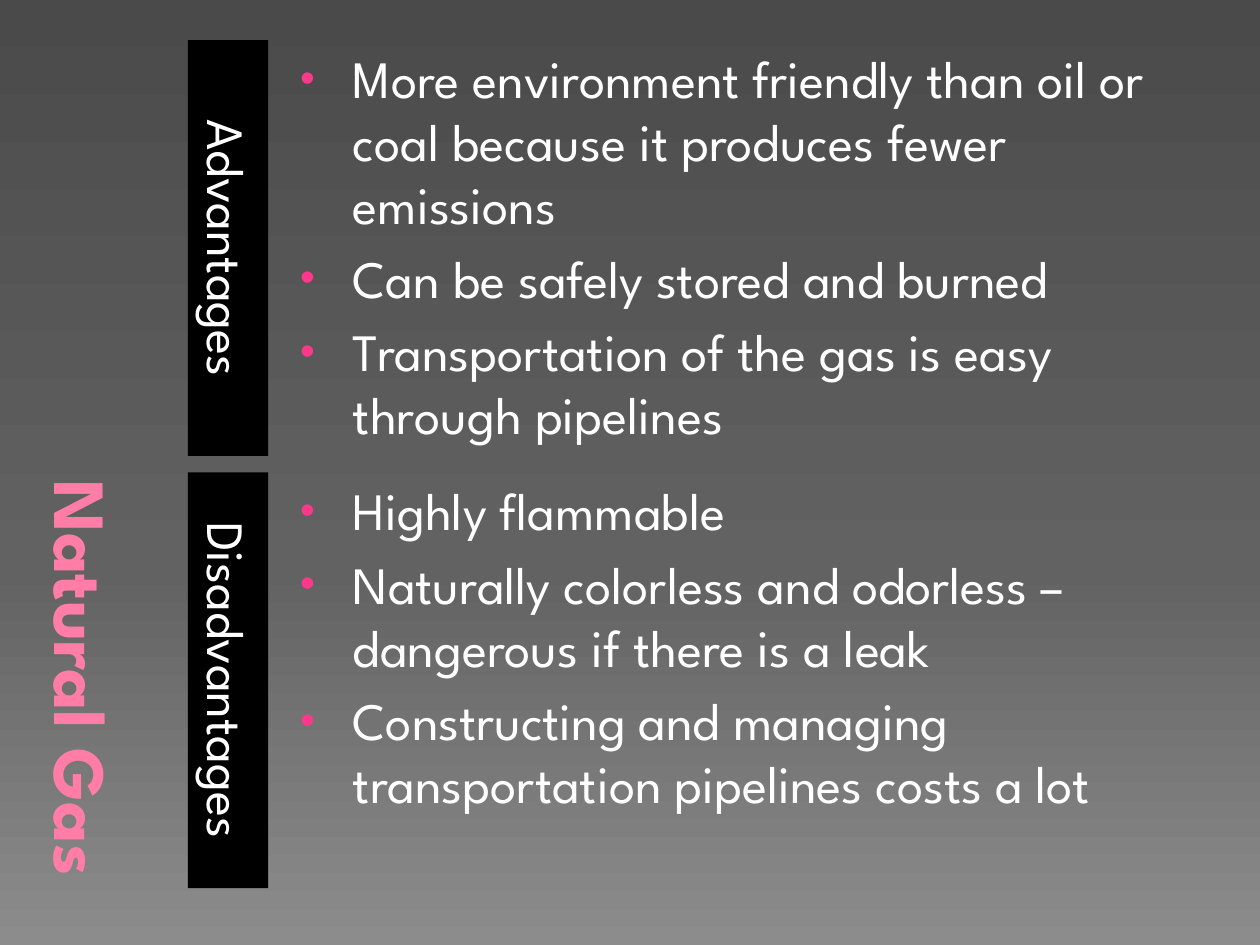
from copy import deepcopy

from pptx import Presentation
from pptx.dml.color import RGBColor
from pptx.enum.shapes import MSO_SHAPE
from pptx.enum.text import MSO_ANCHOR, PP_ALIGN
from pptx.oxml import parse_xml
from pptx.oxml.ns import nsdecls, qn
from pptx.util import Pt

FONT = "League Spartan"
TOP, SECTION_H, GAP = 23, 237.6, 9.3
SECTIONS = [
    ("Advantages", [
        "More environment friendly than oil or coal because it produces fewer emissions",
        "Can be safely stored and burned",
        "Transportation of the gas is easy through pipelines",
    ]),
    ("Disadvantages", [
        "Highly flammable",
        "Naturally colorless and odorless – dangerous if there is a leak",
        "Constructing and managing transportation pipelines costs a lot",
    ]),
]


def rgb(color):
    return RGBColor.from_string(color)


def set_background(s, stops):
    fill = s.background.fill
    fill.gradient()
    fill.gradient_angle = 270
    gs_list = s.element.find(".//" + qn("a:gsLst"))
    while len(gs_list) < len(stops):
        gs_list.append(deepcopy(gs_list[0]))
    for stop, (position, color) in zip(fill.gradient_stops, stops):
        stop.position = position
        stop.color.rgb = rgb(color)


def style(p, size, color, bold=False):
    p.font.name = FONT
    p.font.size = Pt(size)
    p.font.bold = bold
    p.font.color.rgb = rgb(color)


def set_vertical(tf):
    """Turn the text to read from top to bottom."""
    tf.word_wrap = True
    tf._txBody.bodyPr.set("vert", "vert")


def add_title(s, text, x, y, w, h):
    tf = s.shapes.add_textbox(Pt(x), Pt(y), Pt(w), Pt(h)).text_frame
    set_vertical(tf)
    tf.vertical_anchor = MSO_ANCHOR.BOTTOM
    p = tf.paragraphs[0]
    p.alignment = PP_ALIGN.RIGHT
    r = p.add_run()
    r.text = text
    style(p, 42, "FF7DA7", bold=True)
    r.font.color.rgb = rgb("FF7DA7")
    r.font._element.insert(0, parse_xml(
        f'<a:ln {nsdecls("a")} w="6350"><a:solidFill>'
        '<a:srgbClr val="B12761"/></a:solidFill></a:ln>'))


def add_label(s, text, x, y, w, h):
    sp = s.shapes.add_shape(MSO_SHAPE.RECTANGLE, Pt(x), Pt(y), Pt(w), Pt(h))
    sp.shadow.inherit = False
    sp.fill.solid()
    sp.fill.fore_color.rgb = rgb("000000")
    sp.line.fill.background()
    tf = sp.text_frame
    set_vertical(tf)
    tf.vertical_anchor = MSO_ANCHOR.MIDDLE
    p = tf.paragraphs[0]
    p.text = text
    p.alignment = PP_ALIGN.CENTER
    p.space_before = Pt(6)
    style(p, 30, "FFFFFF")


def add_bullet(p):
    pPr = p._p.get_or_add_pPr()
    pPr.set("marL", str(Pt(35.3)))
    pPr.set("indent", str(-Pt(30.2)))
    marks = ('<a:buClr><a:srgbClr val="FF388C"/></a:buClr>',
             '<a:buSzPct val="80000"/>',
             '<a:buFont typeface="Arial"/>',
             '<a:buChar char="•"/>')
    following = pPr.find(qn("a:defRPr"))
    for mark in marks:
        following.addprevious(parse_xml(mark.replace(" ", f' {nsdecls("a")} ', 1)
                                        if not mark.startswith("<a:buClr")
                                        else mark.replace("<a:buClr", f'<a:buClr {nsdecls("a")}', 1)))


def add_points(s, points, x, y, w, h):
    tf = s.shapes.add_textbox(Pt(x), Pt(y), Pt(w), Pt(h)).text_frame
    tf.word_wrap = True
    for i, point in enumerate(points):
        p = tf.add_paragraph() if i else tf.paragraphs[0]
        p.text = point
        p.space_before = Pt(6)
        style(p, 30, "FFFFFF")
        add_bullet(p)


def add_section(s, label, points, x, y, w, h):
    label_w, points_x = 46, 52
    add_label(s, label, x, y, label_w, h)
    add_points(s, points, x + points_x, y, w - points_x, h)


def main():
    prs = Presentation()
    prs.slide_width, prs.slide_height = Pt(720), Pt(540)
    s = prs.slides.add_slide(prs.slide_layouts[6])
    set_background(s, [(0, "4A4A4A"), (0.6, "626262"), (1, "8C8C8C")])
    add_title(s, "Natural Gas", 19.4, TOP, 84.2, 2 * SECTION_H + GAP)
    for i, (label, points) in enumerate(SECTIONS):
        add_section(s, label, points, 107.3, TOP + i * (SECTION_H + GAP), 592, SECTION_H)
    prs.save("out.pptx")


if __name__ == "__main__":
    main()
